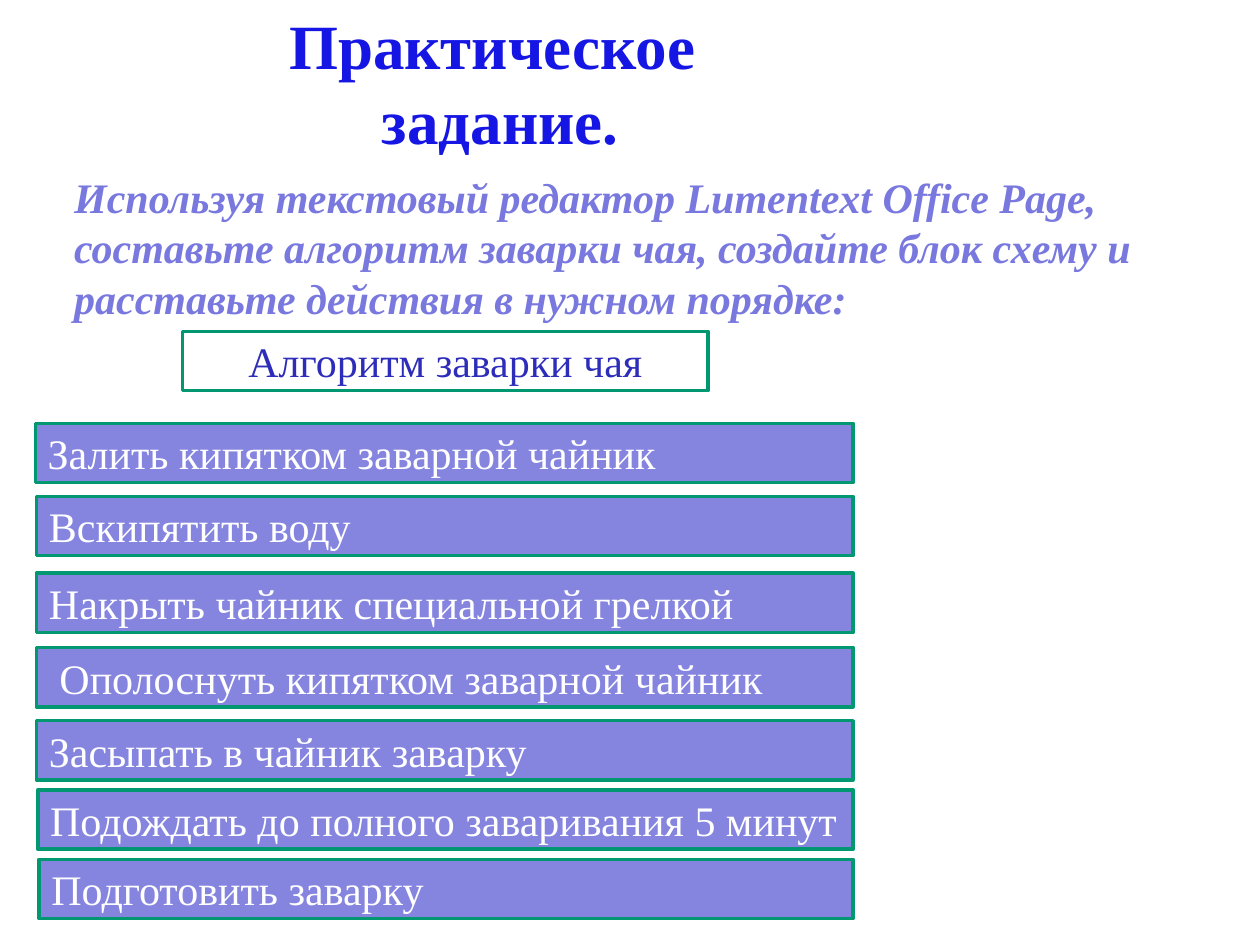
from dataclasses import dataclass

from pptx import Presentation
from pptx.dml.color import RGBColor
from pptx.enum.shapes import MSO_SHAPE as Shape
from pptx.enum.text import MSO_ANCHOR as Anchor, MSO_AUTO_SIZE as AutoSize, PP_ALIGN as Align
from pptx.util import Inches, Pt


@dataclass(frozen=True)
class Theme:
    font: str = "Times New Roman"
    title_size: int = 36
    body_size: int = 24
    line_width: int = 2
    title: str = "1616E4"
    task: str = "7878DE"
    heading: str = "2D2DB9"
    step_fill: str = "8585E0"
    border: str = "009771"
    white: str = "FFFFFF"


THEME = Theme()

TITLE = ["Практическое ", "задание."]
TASK = ("Используя текстовый редактор Lumentext Office Page, составьте алгоритм "
        "заварки чая, создайте блок схему и расставьте действия в нужном порядке:")
HEADING = "Алгоритм заварки чая"
# Step text, left, top
STEPS = [
    ("Залить кипятком заварной чайник", 0.28, 3.36),
    ("Вскипятить воду", 0.29, 3.94),
    ("Накрыть чайник специальной грелкой", 0.29, 4.55),
    (" Ополоснуть кипятком заварной чайник", 0.29, 5.14),
    ("Засыпать в чайник заварку", 0.29, 5.72),
    ("Подождать до полного заваривания 5 минут", 0.3, 6.27),
    ("Подготовить заварку", 0.31, 6.82),
]
STEPS_RIGHT = 6.77
BOX_HEIGHT = 0.47


def write(text_frame, lines, size, color, align=Align.LEFT, bold=False, italic=False):
    for index, line in enumerate(lines):
        paragraph = text_frame.add_paragraph() if index else text_frame.paragraphs[0]
        paragraph.alignment = align
        run = paragraph.add_run()
        run.text = line
        font = run.font
        font.name, font.size = THEME.font, Pt(size)
        font.bold, font.italic = bold, italic
        font.color.rgb = RGBColor.from_string(color)


def add_text(slide, lines, box, wrap, **style):
    text_frame = slide.shapes.add_textbox(*map(Inches, box)).text_frame
    text_frame.word_wrap = wrap
    text_frame.auto_size = AutoSize.SHAPE_TO_FIT_TEXT
    write(text_frame, lines, **style)


def add_box(slide, text, left, top, width, fill, color, align=Align.LEFT):
    shape = slide.shapes.add_shape(
        Shape.RECTANGLE, *map(Inches, (left, top, width, BOX_HEIGHT)))
    shape.shadow.inherit = False
    shape.fill.solid()
    shape.fill.fore_color.rgb = RGBColor.from_string(fill)
    shape.line.color.rgb = RGBColor.from_string(THEME.border)
    shape.line.width = Pt(THEME.line_width)
    shape.text_frame.word_wrap = True
    shape.text_frame.vertical_anchor = Anchor.MIDDLE
    write(shape.text_frame, [text], THEME.body_size, color, align)


def main():
    presentation = Presentation()
    presentation.slide_width, presentation.slide_height = Inches(10), Inches(7.5)
    slide = presentation.slides.add_slide(presentation.slide_layouts[6])

    add_text(slide, TITLE, (2.18, 0, 3.58, 1.31), wrap=False, size=THEME.title_size,
             color=THEME.title, align=Align.CENTER, bold=True)
    add_text(slide, [TASK], (0.49, 1.31, 9.08, 1.31), wrap=True, size=THEME.body_size,
             color=THEME.task, bold=True, italic=True)
    add_box(slide, HEADING, 1.45, 2.63, 4.17, THEME.white, THEME.heading, Align.CENTER)
    for text, left, top in STEPS:
        add_box(slide, text, left, top, STEPS_RIGHT - left, THEME.step_fill, THEME.white)

    presentation.save("out.pptx")


if __name__ == "__main__":
    main()
